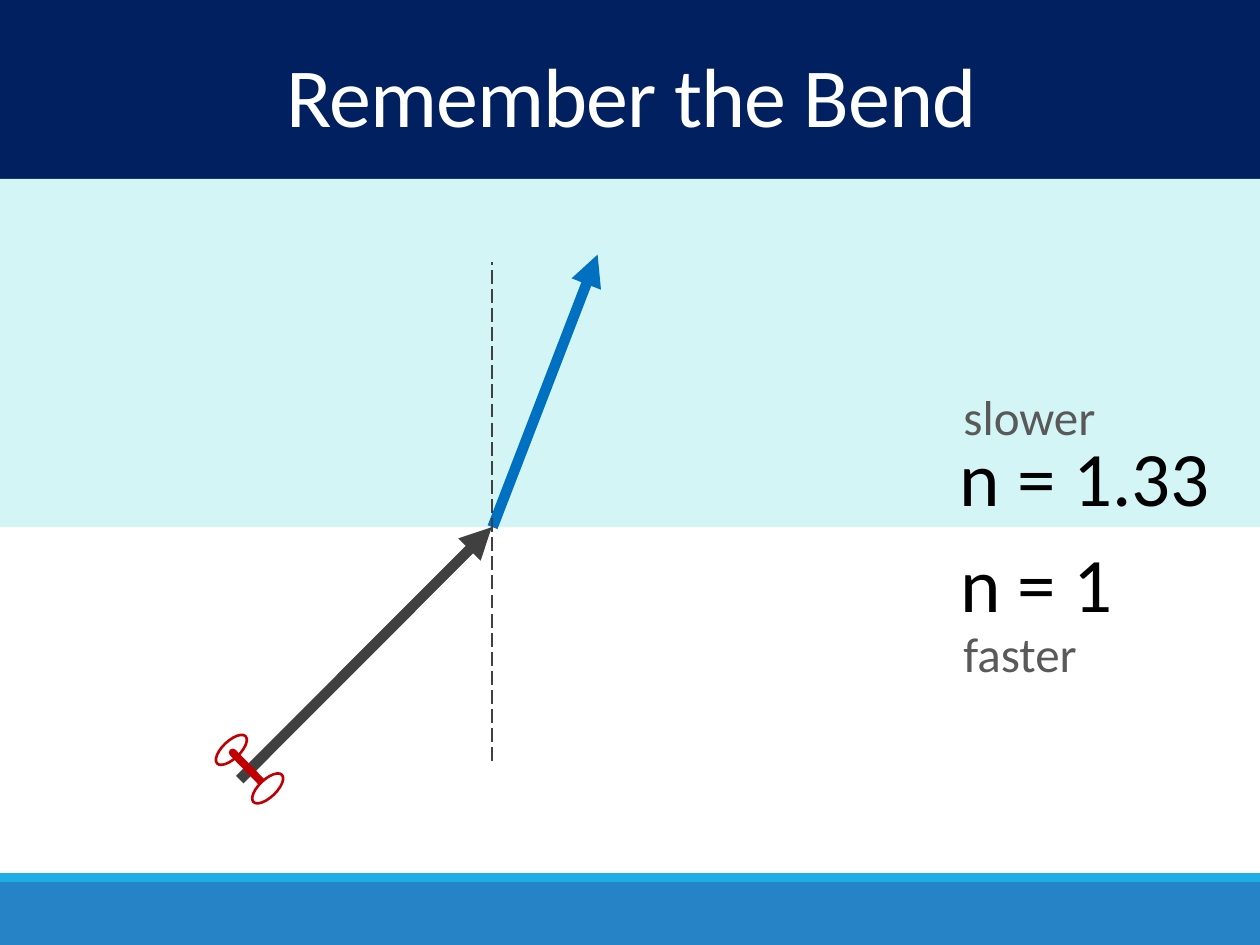
"""Build a slide showing how a ray bends as it enters a slower medium."""
from dataclasses import dataclass
from typing import Optional

from lxml import etree
from pptx import Presentation
from pptx.dml.color import RGBColor
from pptx.enum.dml import MSO_LINE
from pptx.enum.shapes import MSO_CONNECTOR, MSO_SHAPE
from pptx.enum.text import MSO_ANCHOR, MSO_AUTO_SIZE, PP_ALIGN
from pptx.oxml.ns import qn
from pptx.util import Pt

RECTANGLE = MSO_SHAPE.RECTANGLE
OVAL = MSO_SHAPE.OVAL
STRAIGHT = MSO_CONNECTOR.STRAIGHT
LONG_DASH = MSO_LINE.LONG_DASH
CENTER, LEFT = PP_ALIGN.CENTER, PP_ALIGN.LEFT
TOP = MSO_ANCHOR.TOP
FIT_SHAPE, NO_FIT = MSO_AUTO_SIZE.SHAPE_TO_FIT_TEXT, MSO_AUTO_SIZE.NONE


@dataclass(frozen=True)
class Theme:
    font: str = "Calibri"
    navy: str = "002060"
    water: str = "D3F5F6"
    footer: str = "2683C6"
    footer_edge: str = "1CADE4"
    refracted: str = "0070C0"
    incident: str = "404040"
    axle: str = "C00000"
    white: str = "FFFFFF"
    black: str = "000000"
    grey: str = "595959"
    title_size: float = 48
    index_size: float = 44
    speed_size: float = 28


@dataclass(frozen=True)
class Box:
    left: float
    top: float
    width: float
    height: float


@dataclass(frozen=True)
class Band:
    top: float
    height: float
    color: str


@dataclass(frozen=True)
class Ray:
    start: tuple[float, float]
    end: tuple[float, float]
    color: str
    weight: float
    arrow: bool = False
    dashed: bool = False
    rounded: bool = False


@dataclass(frozen=True)
class Label:
    text: str
    box: Box
    size: float
    color: str


THEME = Theme()
SLIDE_WIDTH, SLIDE_HEIGHT = 720, 540
SURFACE_Y = 301.25
HIT_X = 281

BANDS = (
    Band(504, 36, THEME.footer),
    Band(499, 5, THEME.footer_edge),
    Band(0, 102.25, THEME.navy),
    Band(102.25, SURFACE_Y - 102.25, THEME.water),
)
RAYS = (
    Ray((HIT_X + 0.5, SURFACE_Y), (341.5, 145.5), THEME.refracted, 6, arrow=True),
    Ray((HIT_X, 435), (HIT_X, 150), THEME.incident, 1, dashed=True),
    Ray((137, 445.5), (HIT_X, SURFACE_Y), THEME.incident, 6, arrow=True),
)
AXLE = Ray((133, 430), (153, 450.5), THEME.axle, 4.5, rounded=True)
WHEELS = (Box(121, 423.5, 22.5, 10), Box(141.75, 445.5, 22.5, 10))
WHEEL_ANGLE = 316.4
LABELS = (
    Label("n = 1.33", Box(541.5, 242, 160, 60.5), THEME.index_size, THEME.black),
    Label("n = 1", Box(541.5, 302.5, 104, 60.5), THEME.index_size, THEME.black),
    Label("faster", Box(543.5, 353, 94, 41), THEME.speed_size, THEME.grey),
    Label("slower", Box(543.5, 217.5, 94, 41), THEME.speed_size, THEME.grey),
)


def rgb(color: str) -> RGBColor:
    return RGBColor.from_string(color)


def add_filled(shapes, kind, box: Box, fill: str, line: Optional[str] = None,
               weight: float = 1.5, rotation: float = 0):
    shape = shapes.add_shape(kind, Pt(box.left), Pt(box.top), Pt(box.width), Pt(box.height))
    shape.shadow.inherit = False
    shape.rotation = rotation
    shape.fill.solid()
    shape.fill.fore_color.rgb = rgb(fill)
    if line:
        shape.line.color.rgb = rgb(line)
        shape.line.width = Pt(weight)
    else:
        shape.line.fill.background()
    return shape


def add_ray(shapes, ray: Ray):
    connector = shapes.add_connector(
        STRAIGHT, *(Pt(value) for value in (*ray.start, *ray.end)))
    connector.line.color.rgb = rgb(ray.color)
    connector.line.width = Pt(ray.weight)
    if ray.dashed:
        connector.line.dash_style = LONG_DASH
    properties = connector._element.spPr
    outline = properties.find(qn("a:ln"))
    if ray.rounded:
        outline.set("cap", "rnd")
    if ray.arrow:
        etree.SubElement(outline, qn("a:tailEnd"), type="triangle")
    etree.SubElement(properties, qn("a:effectLst"))
    return connector


def add_text(shapes, text: str, box: Box, *, size: float, color: str,
             align=LEFT, wrap: bool = False,
             line_spacing: Optional[float] = None, tracking: float = 0):
    textbox = shapes.add_textbox(Pt(box.left), Pt(box.top), Pt(box.width), Pt(box.height))
    frame = textbox.text_frame
    frame.word_wrap = wrap
    frame.auto_size = NO_FIT if wrap else FIT_SHAPE
    frame.vertical_anchor = TOP
    paragraph = frame.paragraphs[0]
    paragraph.alignment = align
    paragraph.line_spacing = line_spacing
    run = paragraph.add_run()
    run.text = text
    run.font.name = THEME.font
    run.font.size = Pt(size)
    run.font.color.rgb = rgb(color)
    if tracking:
        run._r.get_or_add_rPr().set("spc", str(round(tracking * 100)))
    return textbox


def add_wheelset(shapes):
    group = shapes.add_group_shape().shapes
    upper, lower = WHEELS
    wheel_format = {"line": THEME.axle, "rotation": WHEEL_ANGLE}
    add_filled(group, OVAL, upper, THEME.white, **wheel_format)
    add_ray(group, AXLE)
    add_filled(group, OVAL, lower, THEME.white, **wheel_format)


def main():
    deck = Presentation()
    deck.slide_width, deck.slide_height = Pt(SLIDE_WIDTH), Pt(SLIDE_HEIGHT)
    shapes = deck.slides.add_slide(deck.slide_layouts[6]).shapes
    for band in BANDS:
        add_filled(shapes, RECTANGLE, Box(0, band.top, SLIDE_WIDTH, band.height), band.color)
    add_text(shapes, "Remember the Bend", Box(2, 30, 718, 60.5),
             size=THEME.title_size, color=THEME.white, align=CENTER,
             wrap=True, line_spacing=0.85, tracking=-0.5)
    for ray in RAYS:
        add_ray(shapes, ray)
    add_wheelset(shapes)
    for label in LABELS:
        add_text(shapes, label.text, label.box, size=label.size, color=label.color)
    deck.save("out.pptx")


if __name__ == "__main__":
    main()
